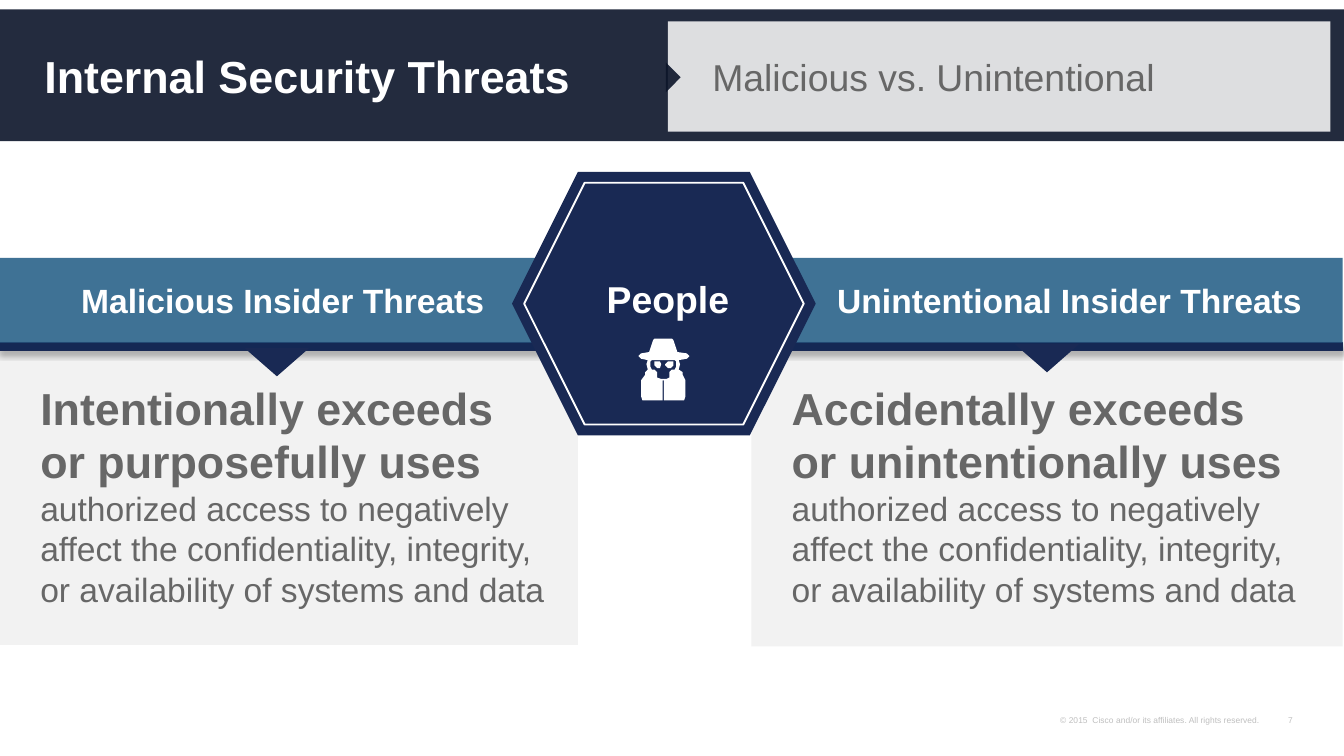
"""Build the Internal Security Threats slide, malicious versus unintentional."""
import pptx
import pptx.util
import pptx.dml.color
import pptx.enum.shapes
import pptx.enum.text
import pptx.oxml
import pptx.oxml.ns

Inches = pptx.util.Inches
Pt = pptx.util.Pt
RGB = pptx.dml.color.RGBColor.from_string
SHAPE = pptx.enum.shapes.MSO_SHAPE
ALIGN = pptx.enum.text.PP_ALIGN
ANCHOR = pptx.enum.text.MSO_ANCHOR
qn = pptx.oxml.ns.qn
C = {"navy": "192954", "rule": "142854", "ink": "0C152A", "blue": "2B638A",
     "panel": "F2F2F2", "text": "676767", "white": "FFFFFF", "footer": "BFBFBF"}


def style(sp, fill=None, alpha=100, line=None, width=1):
    if fill:
        sp.fill.solid()
        sp.fill.fore_color.rgb = RGB(C[fill])
        if alpha < 100:
            clr = sp._element.spPr.find(qn("a:solidFill"))[0]
            clr.append(pptx.oxml.parse_xml(
                f'<a:alpha {pptx.oxml.ns.nsdecls("a")} val="{alpha * 1000}"/>'))
    else:
        sp.fill.background()
    if line:
        sp.line.color.rgb = RGB(C[line])
        sp.line.width = Pt(width)
    else:
        sp.line.fill.background()
    sp.shadow.inherit = False


def write(sp, paras, color, insets, align=ALIGN.LEFT, anchor=ANCHOR.MIDDLE, wrap=True):
    tf = sp.text_frame
    tf.auto_size = pptx.enum.text.MSO_AUTO_SIZE.NONE
    tf.word_wrap = wrap
    tf.vertical_anchor = anchor
    tf.margin_left, tf.margin_top, tf.margin_right, tf.margin_bottom = map(Inches, insets)
    for i, (text, size, bold) in enumerate(paras):
        p = tf.add_paragraph() if i else tf.paragraphs[0]
        p.alignment = align
        p.space_before = Pt(0)
        r = p.add_run()
        r.text = text
        r.font.name = "Arial"
        r.font.size = Pt(size)
        r.font.bold = bold
        r.font.color.rgb = RGB(C[color])


prs = pptx.Presentation()
prs.slide_width = Inches(10)
prs.slide_height = prs.slide_width * 9 // 16
s = prs.slides.add_slide(prs.slide_layouts[5])
shapes = s.shapes

title = shapes.title
title.left, title.top, title.width, title.height = map(Inches, (0, 0.07, 10, 0.98))
style(title, "ink", 90)
header_insets = (0.33, 0.07, 0.13, 0.07)
write(title, [("Internal Security Threats", 24, True)], "white", header_insets)

for text, at in [("7", (9.49, 5.3, 0.18, 0.13)),
                 ("© 2015  Cisco and/or its affiliates. All rights reserved.", (6.53, 5.3, 2.89, 0.13))]:
    sp = shapes.add_textbox(*map(Inches, at))
    write(sp, [(text, 4.5, False)], "footer", (0.05, 0.03, 0.05, 0.03),
          ALIGN.RIGHT, ANCHOR.BOTTOM)

panels = [
    ((5.59, 2.55, 4.4, 2.26),
     [("Accidentally exceeds", 24, True),
      ("or unintentionally uses", 24, True),
      ("authorized access to negatively affect the confidentiality, integrity,", 18, False),
      ("or availability of systems and data", 18, False)]),
    ((0, 2.56, 4.3, 2.24),
     [("Intentionally exceeds", 24, True),
      ("or purposefully uses", 24, True),
      ("authorized access to negatively affect the confidentiality, integrity, "
       "or availability of systems and data", 18, False)]),
]
for at, paras in panels:
    sp = shapes.add_shape(SHAPE.RECTANGLE, *map(Inches, at))
    style(sp, "panel", 95)
    write(sp, paras, "text", (0.3, 0.05, 0.1, 0.05))

rule = shapes.add_shape(SHAPE.RECTANGLE, *map(Inches, (-0.01, 2.55, 10, 0.06)))
style(rule, "rule", line="navy", width=0.75)
rule._element.spPr.find(qn("a:effectLst")).append(pptx.oxml.parse_xml(
    f'<a:outerShdw {pptx.oxml.ns.nsdecls("a")} blurRad="{Pt(3.1)}" dist="{Pt(1.8)}" '
    'dir="5400000" rotWithShape="0"><a:srgbClr val="000000"><a:alpha val="35000"/>'
    '</a:srgbClr></a:outerShdw>'))

for text, left, width in [("Malicious Insider Threats", 0, 4.11),
                          ("Unintentional Insider Threats", 5.83, 4.16)]:
    sp = shapes.add_shape(SHAPE.RECTANGLE, *map(Inches, (left, 1.92, width, 0.63)))
    style(sp, "blue", 90)
    write(sp, [(text, 18, True)], "white", (0.1, 0.05, 0, 0.05), ALIGN.CENTER)

sub = shapes.add_shape(SHAPE.RECTANGLE, *map(Inches, (4.97, 0.16, 4.93, 0.82)))
style(sub, "panel", 90)
write(sub, [("Malicious vs. Unintentional", 20, False)], "text", header_insets)

for at, rot, fill, alpha in [((4.9, 0.52, 0.22, 0.11), 90, "ink", 90),
                             ((1.82, 2.59, 0.48, 0.21), 180, "navy", 100),
                             ((7.55, 2.56, 0.48, 0.21), 180, "navy", 100)]:
    sp = shapes.add_shape(SHAPE.ISOSCELES_TRIANGLE, *map(Inches, at))
    sp.rotation = rot
    style(sp, fill, alpha)

for at, fill, line in [((3.81, 1.28, 2.26, 1.96), "navy", None),
                       ((3.9, 1.36, 2.08, 1.8), None, "white")]:
    sp = shapes.add_shape(SHAPE.HEXAGON, *map(Inches, at))
    style(sp, fill, line=line)

sp = shapes.add_textbox(*map(Inches, (4.48, 2.09, 0.98, 0.27)))
write(sp, [("People", 20, True)], "white", (0, 0, 0, 0), ALIGN.CENTER, wrap=False)

spy = [
    [(482, 268), (477, 267), (475, 265), (477, 263), (483, 262), (486, 253),
     (487, 252), (500, 252), (501, 253), (504, 262), (511, 263), (513, 265),
     (511, 267), (505, 268), (506, 271), (505, 275), (508, 277), (508, 279),
     (510, 283), (510, 295), (509, 298), (507, 298), (494, 298), (494, 283),
     (493, 283), (493, 298), (480, 298), (478, 298), (477, 295), (477, 283),
     (480, 279), (480, 277), (482, 275), (481, 271)],
    [(494, 268), (485, 268), (484, 269), (484, 273), (485, 275), (487, 275),
     (489, 277), (489, 281), (492, 282), (496, 282), (498, 281), (498, 277),
     (500, 275), (502, 275), (503, 273), (503, 269), (502, 268)],
    [(487, 269), (491, 269), (492, 271), (491, 274), (489, 274), (487, 272)],
    [(497, 269), (501, 269), (501, 272), (499, 274), (497, 274), (495, 272), (495, 271)],
]
fb = shapes.build_freeform(*spy[0][0], scale=Inches(0.01))
for i, pts in enumerate(spy):
    if i:
        fb.move_to(*pts[0])
    fb.add_line_segments(pts[1:], close=True)
style(fb.convert_to_shape(), "white")

prs.save("out.pptx")
